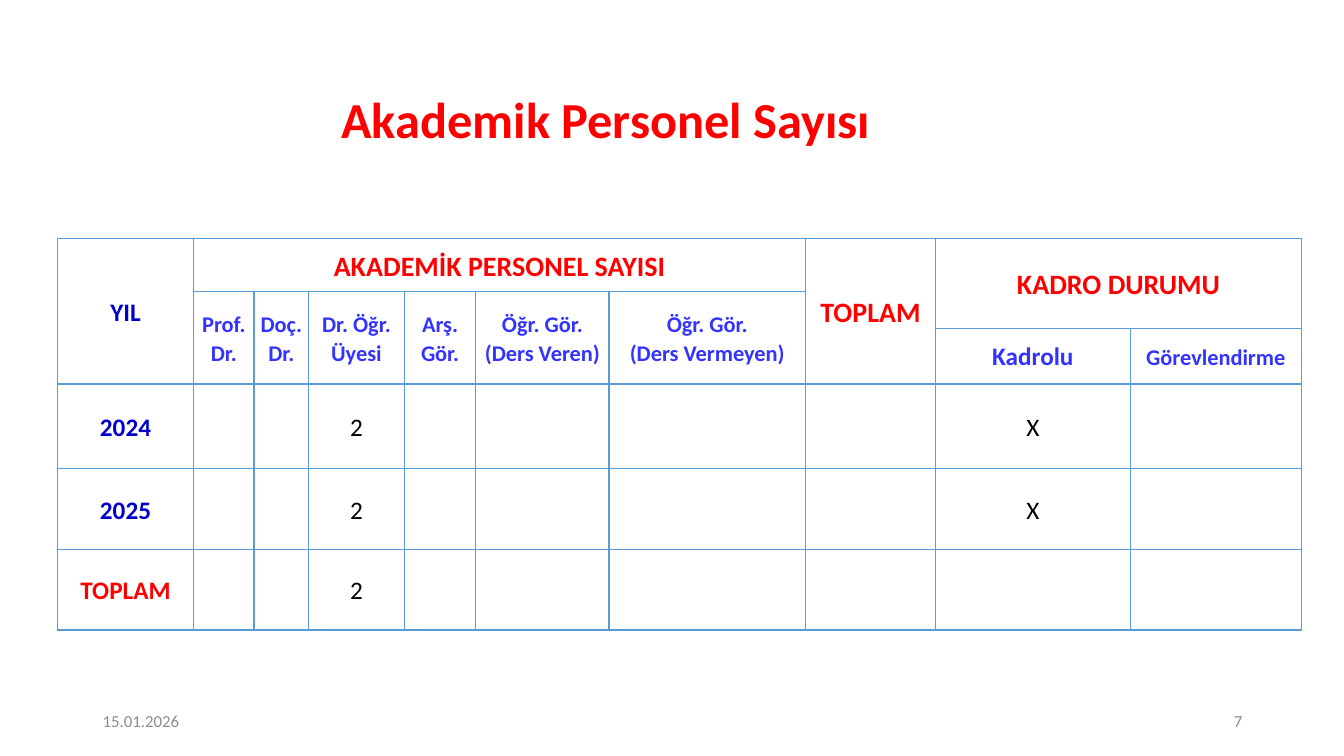
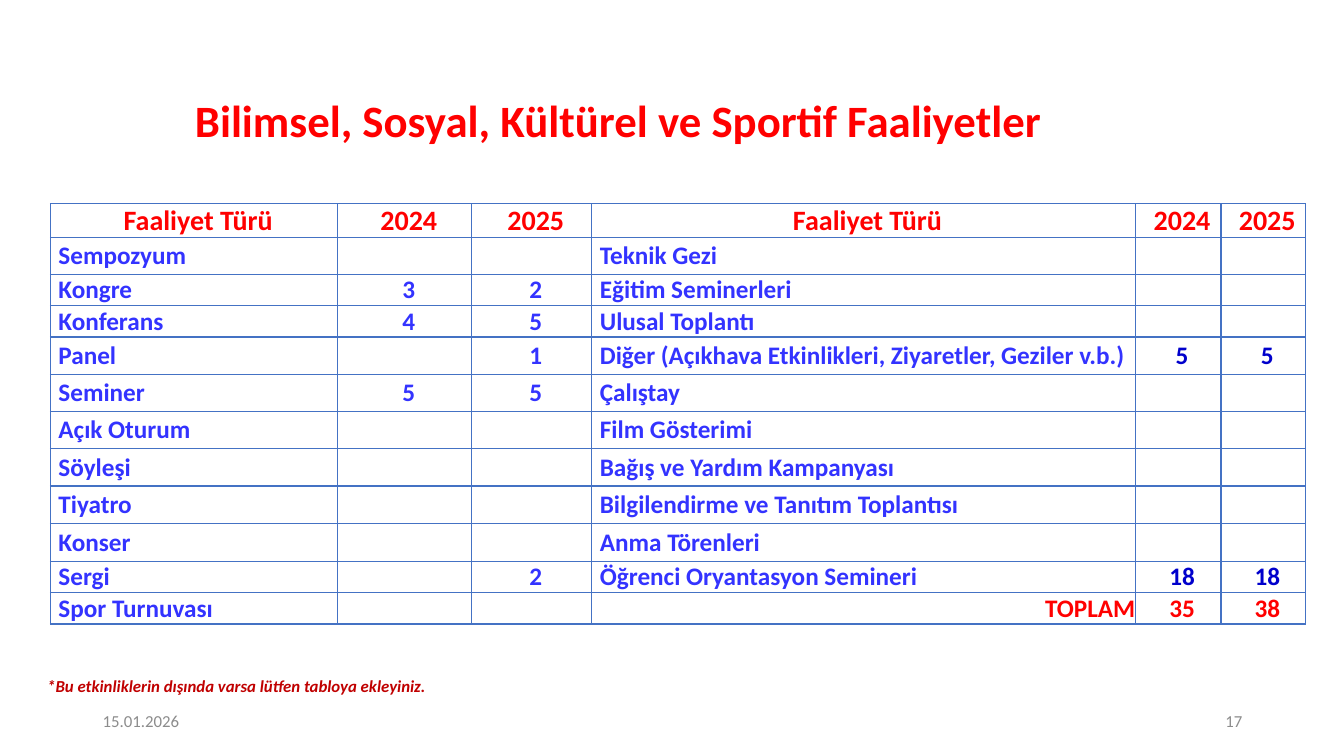
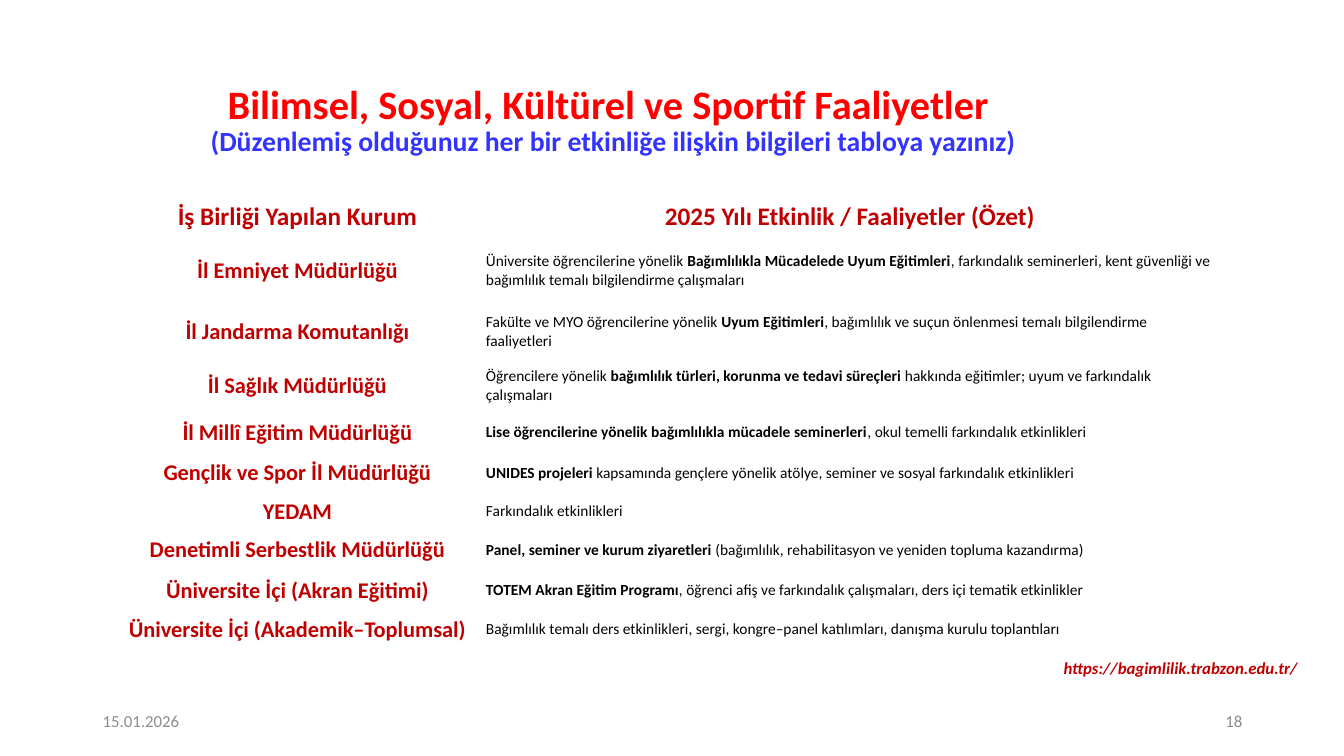
from dataclasses import dataclass, replace
from typing import Optional

from pptx import Presentation
from pptx.dml.color import RGBColor
from pptx.enum.text import MSO_ANCHOR, PP_ALIGN
from pptx.oxml import parse_xml
from pptx.oxml.ns import nsdecls
from pptx.slide import Slide
from pptx.table import Table, _Cell
from pptx.text.text import TextFrame
from pptx.util import Inches, Pt

# Shared look
FACE = "Calibri"
RED = RGBColor(0xFF, 0x00, 0x00)
DARK = RGBColor(0xC0, 0x00, 0x00)
BLUE = RGBColor(0x33, 0x33, 0xFF)
NAVY = RGBColor(0x00, 0x00, 0xCC)
BLACK = RGBColor(0x00, 0x00, 0x00)
GREY = RGBColor(0x8C, 0x8C, 0x8C)
SKY = RGBColor(0x5B, 0x9B, 0xD5)
STEEL = RGBColor(0x44, 0x72, 0xC4)
LEFT, MID, RIGHT = PP_ALIGN.LEFT, PP_ALIGN.CENTER, PP_ALIGN.RIGHT
DATE = "15.01.2026"


@dataclass(frozen=True)
class Style:
    size: float
    color: RGBColor
    bold: bool = True
    slant: bool = False
    align: PP_ALIGN = MID
    space: float = 1.0


@dataclass(frozen=True)
class Box:
    left: float
    top: float
    width: float
    height: float


@dataclass(frozen=True)
class Grid:
    left: float
    top: float
    cols: list[float]
    rows: list[float]
    pads: tuple[float, float, float, float]  # left, top, right, bottom
    line: Optional[RGBColor] = None


@dataclass(frozen=True)
class Head:
    row: int
    col: int
    text: str
    style: Style
    down: int = 1
    over: int = 1


FOOT = Style(12, GREY, bold=False, align=LEFT)
NOTE = Style(12, DARK, slant=True, align=LEFT)


# Text: each line is a paragraph, ** toggles bold
def write(frame: TextFrame, text: str, style: Style) -> None:
    for i, line in enumerate(text.split("\n")):
        para = frame.add_paragraph() if i else frame.paragraphs[0]
        para.alignment = style.align
        para.line_spacing = style.space
        font = para.font
        font.name, font.size = FACE, Pt(style.size)
        font.bold, font.italic = style.bold, style.slant
        font.color.rgb = style.color
        for j, part in enumerate(line.split("**")):
            if part:
                run = para.add_run()
                run.text = part
                if j % 2:
                    run.font.bold = True


def label(slide: Slide, box: Box, text: str, style: Style,
          anchor: MSO_ANCHOR = MSO_ANCHOR.MIDDLE) -> TextFrame:
    shape = slide.shapes.add_textbox(Inches(box.left), Inches(box.top),
                                     Inches(box.width), Inches(box.height))
    frame = shape.text_frame
    frame.word_wrap = True
    frame.vertical_anchor = anchor
    write(frame, text, style)
    return frame


# Slide with title, date and number
def start(deck: Presentation, box: Box, title: str, size: float,
          page: int, hint: str = "") -> Slide:
    slide = deck.slides.add_slide(deck.slide_layouts[6])
    frame = label(slide, box, title, Style(size, RED, space=0.9))
    if hint:
        para = frame.paragraphs[0]
        para.add_line_break()
        run = para.add_run()
        run.text = hint
        run.font.size, run.font.color.rgb = Pt(19.8), BLUE
    label(slide, Box(0.92, 6.95, 3, 0.4), DATE, FOOT)
    label(slide, Box(9.42, 6.95, 3, 0.4), str(page), replace(FOOT, align=RIGHT))
    return slide


# Tables
def edge(cell: _Cell, color: RGBColor) -> None:
    props = cell._tc.get_or_add_tcPr()
    for i, side in enumerate("LRTB"):
        props.insert(i, parse_xml(
            f'<a:ln{side} {nsdecls("a")} w="12700"><a:solidFill>'
            f'<a:srgbClr val="{color}"/></a:solidFill></a:ln{side}>'))


def lay(slide: Slide, grid: Grid) -> Table:
    table = slide.shapes.add_table(
        len(grid.rows), len(grid.cols), Inches(grid.left), Inches(grid.top),
        Inches(sum(grid.cols)), Inches(sum(grid.rows))).table
    table.first_row = table.horz_banding = False
    for col, width in zip(table.columns, grid.cols):
        col.width = Inches(width)
    for row, height in zip(table.rows, grid.rows):
        row.height = Inches(height)
    for cell in table.iter_cells():
        cell.fill.background()
        cell.vertical_anchor = MSO_ANCHOR.MIDDLE
        (cell.margin_left, cell.margin_top,
         cell.margin_right, cell.margin_bottom) = map(Inches, grid.pads)
        if grid.line is not None:
            edge(cell, grid.line)
    return table


def put(table: Table, row: int, col: int, text: str, style: Style) -> None:
    if text:
        write(table.cell(row, col).text_frame, text, style)


# Slide 1: academic staff
def staff(deck: Presentation) -> None:
    slide = start(deck, Box(0.37, 0.83, 11.28, 0.76),
                  "Akademik Personel Sayısı", 36, 7)
    table = lay(slide, Grid(
        0.57, 2.37,
        [1.35, 0.6, 0.54, 0.95, 0.71, 1.32, 1.95, 1.29, 1.93, 1.7],
        [0.52, 0.37, 0.55, 0.84, 0.8, 0.8], (0.01, 0.01, 0.01, 0), SKY))
    top = Style(20, RED, space=1.07)
    sub = replace(top, size=16, color=BLUE)
    year = replace(top, size=18, color=NAVY)
    mark = replace(year, color=BLACK, bold=False)
    ranks = ["Prof. Dr.", "Doç. Dr.", "Dr. Öğr. Üyesi", "Arş. Gör.",
             "Öğr. Gör.\n(Ders Veren)", "Öğr. Gör.\n(Ders Vermeyen)"]
    heads = [
        Head(0, 0, "YIL", year, down=3),
        Head(0, 1, "AKADEMİK PERSONEL SAYISI", top, over=6),
        Head(0, 7, "TOPLAM", top, down=3),
        Head(0, 8, "KADRO DURUMU", top, down=2, over=2),
        *(Head(1, i, rank, sub, down=2) for i, rank in enumerate(ranks, 1)),
        Head(2, 8, "Kadrolu", replace(sub, size=18, space=1.0)),
        Head(2, 9, "Görevlendirme", sub),
    ]
    for head in heads:
        if head.down * head.over > 1:
            last = table.cell(head.row + head.down - 1, head.col + head.over - 1)
            table.cell(head.row, head.col).merge(last)
        put(table, head.row, head.col, head.text, head.style)
    body = [("2024", year, "X"), ("2025", year, "X"),
            ("TOPLAM", replace(year, color=RED), "")]
    for i, (name, style, post) in enumerate(body, 3):
        put(table, i, 0, name, style)
        put(table, i, 3, "2", mark)
        put(table, i, 8, post, mark)


# Slide 2: activity counts
def counts(deck: Presentation) -> None:
    slide = start(deck, Box(0.36, 0.86, 11.55, 0.73),
                  "Bilimsel, Sosyal, Kültürel ve Sportif Faaliyetler", 32, 17)
    label(slide, Box(0.37, 6.65, 5, 0.3),
          "*Bu etkinliklerin dışında varsa lütfen tabloya ekleyiniz.",
          NOTE, MSO_ANCHOR.TOP)
    table = lay(slide, Grid(
        0.5, 2.02, [2.85, 1.33, 1.19, 5.39, 0.85, 0.84],
        [0.33, 0.37, 0.31, 0.31, *[0.37] * 5, 0.38, 0.31, 0.31],
        (0.08, 0, 0, 0), STEEL))
    for i, text in enumerate(["Faaliyet Türü", "2024", "2025"] * 2):
        put(table, 0, i, text, Style(20, RED))
    rows = [
        ("Sempozyum", "", "", "Teknik Gezi", "", ""),
        ("Kongre", "3", "2", "Eğitim Seminerleri", "", ""),
        ("Konferans", "4", "5", "Ulusal Toplantı", "", ""),
        ("Panel", "", "1",
         "Diğer (Açıkhava Etkinlikleri, Ziyaretler, Geziler v.b.)", "5", "5"),
        ("Seminer", "5", "5", "Çalıştay", "", ""),
        ("Açık Oturum", "", "", "Film Gösterimi", "", ""),
        ("Söyleşi", "", "", "Bağış ve Yardım Kampanyası", "", ""),
        ("Tiyatro", "", "", "Bilgilendirme ve Tanıtım Toplantısı", "", ""),
        ("Konser", "", "", "Anma Törenleri", "", ""),
        ("Sergi", "", "2", "Öğrenci Oryantasyon Semineri", "18", "18"),
        ("Spor Turnuvası", "", "", "TOPLAM", "35", "38"),
    ]
    name = Style(18, BLUE, align=LEFT)
    count = replace(name, align=MID)
    late = replace(count, color=NAVY)
    total = replace(count, color=RED)
    plain = [name, count, count, name, late, late]
    final = [name, count, count, replace(total, align=RIGHT), total, total]
    for i, row in enumerate(rows, 1):
        styles = final if i == len(rows) else plain
        for j, (text, style) in enumerate(zip(row, styles)):
            put(table, i, j, text, style)


# Slide 3: partner bodies
def partners(deck: Presentation) -> None:
    slide = start(
        deck, Box(0.39, 0.76, 11.38, 0.88),
        "Bilimsel, Sosyal, Kültürel ve Sportif Faaliyetler ", 28.8, 18,
        "(Düzenlemiş olduğunuz her bir etkinliğe ilişkin bilgileri tabloya yazınız)")
    label(slide, Box(10.45, 6.48, 2.64, 0.3),
          "https://bagimlilik.trabzon.edu.tr/", NOTE, MSO_ANCHOR.TOP)
    table = lay(slide, Grid(
        1.14, 1.97, [3.62, 7.34],
        [0.37, 0.69, 0.53, 0.53, 0.4, 0.4, 0.37, 0.4, 0.4, 0.37],
        (0.06, 0.03, 0.06, 0.03)))
    rows = [
        ("İl Emniyet Müdürlüğü",
         "Üniversite öğrencilerine yönelik **Bağımlılıkla Mücadelede Uyum "
         "Eğitimleri**, farkındalık seminerleri, kent güvenliği ve bağımlılık "
         "temalı bilgilendirme çalışmaları"),
        ("İl Jandarma Komutanlığı",
         "Fakülte ve MYO öğrencilerine yönelik **Uyum Eğitimleri**, bağımlılık "
         "ve suçun önlenmesi temalı bilgilendirme faaliyetleri"),
        ("İl Sağlık Müdürlüğü",
         "Öğrencilere yönelik **bağımlılık türleri, korunma ve tedavi "
         "süreçleri** hakkında eğitimler; uyum ve farkındalık çalışmaları"),
        ("İl Millî Eğitim Müdürlüğü",
         "**Lise öğrencilerine yönelik bağımlılıkla mücadele seminerleri**, "
         "okul temelli farkındalık etkinlikleri"),
        ("Gençlik ve Spor İl Müdürlüğü",
         "**UNIDES projeleri** kapsamında gençlere yönelik atölye, seminer ve "
         "sosyal farkındalık etkinlikleri"),
        ("YEDAM", "Farkındalık etkinlikleri"),
        ("Denetimli Serbestlik Müdürlüğü",
         "**Panel, seminer ve kurum ziyaretleri** (bağımlılık, rehabilitasyon "
         "ve yeniden topluma kazandırma)"),
        ("Üniversite İçi (Akran Eğitimi)",
         "**TOTEM Akran Eğitim Programı**, öğrenci afiş ve farkındalık "
         "çalışmaları, ders içi tematik etkinlikler"),
        ("Üniversite İçi (Akademik–Toplumsal)",
         "Bağımlılık temalı ders etkinlikleri, sergi, kongre–panel "
         "katılımları, danışma kurulu toplantıları"),
    ]
    head = Style(18, DARK)
    put(table, 0, 0, "İş Birliği Yapılan Kurum", head)
    put(table, 0, 1, "2025 Yılı Etkinlik / Faaliyetler (Özet)", head)
    for i, (body, work) in enumerate(rows, 1):
        put(table, i, 0, body, replace(head, size=16))
        put(table, i, 1, work, Style(11, BLACK, bold=False, align=LEFT))


def main() -> None:
    deck = Presentation()
    deck.slide_width, deck.slide_height = Inches(13.33), Inches(7.5)
    for build in (staff, counts, partners):
        build(deck)
    deck.save("out.pptx")


if __name__ == "__main__":
    main()
